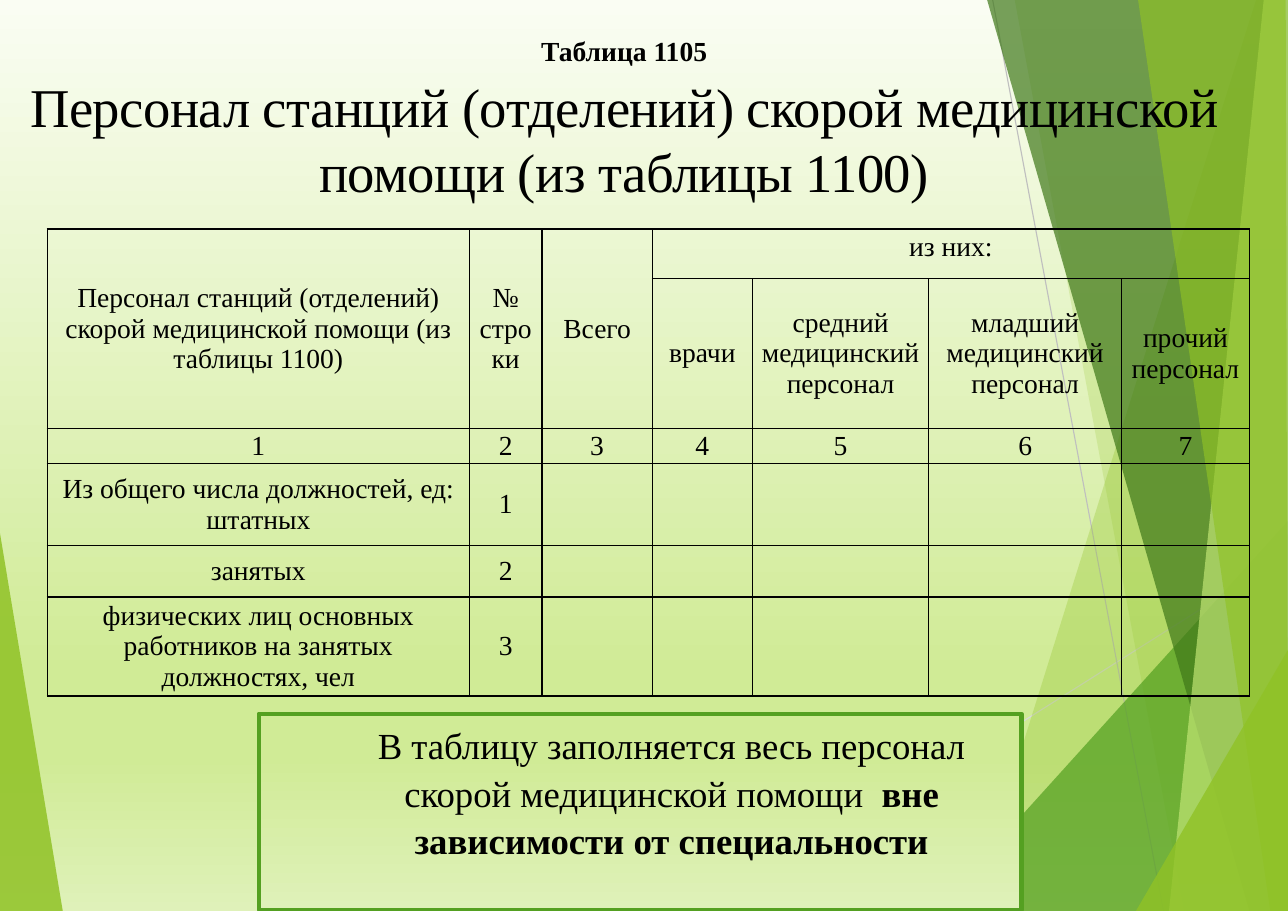
from lxml import etree
from pptx import Presentation
from pptx.dml.color import RGBColor
from pptx.enum.shapes import MSO_CONNECTOR, MSO_SHAPE
from pptx.enum.text import MSO_ANCHOR, PP_ALIGN
from pptx.oxml.ns import qn
from pptx.util import Inches, Pt

STRAIGHT = MSO_CONNECTOR.STRAIGHT
RECTANGLE = MSO_SHAPE.RECTANGLE
TOP, MIDDLE = MSO_ANCHOR.TOP, MSO_ANCHOR.MIDDLE
CENTER = PP_ALIGN.CENTER

COLORS = {
    "black": "000000", "lime": "90C226", "green": "54A021", "forest": "3F7819",
    "pale": "C0E474", "silver": "D9D9D9", "gray": "BFBFBF",
    "mist": "FAFDF3", "meadow": "D0EB96", "fresh": "DFF1B9",
}
WIDTH, HEIGHT = 11.69, 8.27
PAGE_STOPS = [(0, "mist"), (74, "meadow"), (83, "meadow"), (100, "fresh")]
NOTE_STOPS = [(0, "meadow"), (21, "meadow"), (100, "fresh")]

LEFT_WEDGE = ([(0, 4.84), (0.57, 8.27), (0, 8.27)], "lime", 85)
RAYS = [((6.56, 8.27), (11.69, 5.03), "silver"), ((9.01, 0), (10.56, 8.27), "gray")]
RIGHT_WEDGES = [
    ([(11.4, 0), (8.81, 8.27), (11.69, 8.27), (11.69, 0)], "lime", 30),
    ([(9.21, 0), (10.75, 8.27), (11.69, 8.27), (11.69, 0)], "lime", 20),
    ([(8.49, 8.27), (11.69, 4.73), (11.69, 8.27)], "green", 72),
    ([(8.96, 0), (11.34, 8.27), (11.69, 8.27), (11.69, 0)], "forest", 70),
    ([(11.47, 0), (10.61, 8.27), (11.69, 8.27), (11.69, 0)], "pale", 70),
    ([(10.33, 0), (11.53, 8.27), (11.69, 8.27), (11.67, 0)], "lime", 65),
    ([(10.31, 8.27), (11.69, 5.9), (11.69, 8.27)], "lime", 80),
]

STAFF = "Персонал станций (отделений) скорой медицинской помощи (из таблицы 1100)"
COLUMNS = [3.83, 0.66, 1, 0.91, 1.6, 1.75, 1.16]
ROWS = [0.45, 1.36, 0.32, 0.74, 0.47, 0.74]
MERGES = [(0, 0, 1, 0), (0, 1, 1, 1), (0, 2, 1, 2), (0, 3, 0, 6)]
CELLS = [
    [[STAFF], ["№", "строки"], ["Всего"], ["из них:"]],
    [[], [], [], ["врачи"], ["средний медицинский", "персонал"],
     ["младший", "медицинский", "персонал"], ["прочий персонал"]],
    [[str(number)] for number in range(1, 8)],
    [["Из общего числа должностей, ед:", "штатных"], ["1"]],
    [["занятых"], ["2"]],
    [["физических лиц основных работников на занятых", "должностях, чел"], ["3"]],
]


class Slide:
    font = "Times New Roman"

    def __init__(self, deck):
        self.page = deck.slides.add_slide(deck.slide_layouts[6])

    def color(self, name):
        return RGBColor.from_string(COLORS[name])

    def gradient(self, fill, element, stops):
        fill.gradient()
        fill.gradient_angle = 270
        stop_list = element.find(".//" + qn("a:gsLst"))
        for stop in list(stop_list):
            stop_list.remove(stop)
        for place, name in stops:
            stop = etree.SubElement(stop_list, qn("a:gs"), pos=str(place * 1000))
            etree.SubElement(stop, qn("a:srgbClr"), val=COLORS[name])

    def background(self, stops):
        self.gradient(self.page.background.fill, self.page.element, stops)

    def wedge(self, points, name, opacity):
        corners = [(round(x * 100), round(y * 100)) for x, y in points]
        builder = self.page.shapes.build_freeform(*corners[0], scale=Inches(0.01))
        builder.add_line_segments(corners[1:], close=True)
        shape = builder.convert_to_shape()
        shape.shadow.inherit = False
        shape.line.fill.background()
        shape.fill.solid()
        shape.fill.fore_color.rgb = self.color(name)
        tint = shape.element.spPr.find(".//" + qn("a:srgbClr"))
        etree.SubElement(tint, qn("a:alpha"), val=str(opacity * 1000))

    def line(self, start, end, name):
        ends = [Inches(value) for value in (*start, *end)]
        line = self.page.shapes.add_connector(STRAIGHT, *ends)
        line.line.color.rgb = self.color(name)
        line.line.width = Pt(0.75)
        etree.SubElement(line.element.spPr, qn("a:effectLst"))

    def para(self, frame, spans, first, spacing=None):
        para = frame.paragraphs[0] if first else frame.add_paragraph()
        para.alignment = CENTER
        if spacing:
            para.line_spacing = spacing
        for text, size, bold in spans:
            span = para.add_run()
            span.text = text
            span.font.name = self.font
            span.font.size = Pt(size)
            span.font.bold = bold
            span.font.color.rgb = self.color("black")
        return para

    def title(self, label, text):
        box = self.page.shapes.add_textbox(0, 0, Inches(WIDTH), Inches(2.05))
        frame = box.text_frame
        frame.word_wrap = True
        frame.vertical_anchor = TOP
        frame.margin_top = Inches(0.31)
        caption = self.para(frame, [(label, 18, True)], True)
        caption._p.get_or_add_pPr().set("marR", str(Inches(0.36)))
        heading = self.para(frame, [(text, 35.7, False)], False, Pt(42.7))
        heading.space_before = Pt(3.6)
        heading.runs[0].font._element.set("spc", "-30")

    def cell(self, cell, lines, spacing):
        cell.fill.background()
        cell.vertical_anchor = MIDDLE
        cell.margin_left = cell.margin_right = Inches(0.07)
        cell.margin_top = cell.margin_bottom = 0
        for index, text in enumerate(lines):
            self.para(cell.text_frame, [(text, 18, False)], index == 0, spacing)
        properties = cell._tc.get_or_add_tcPr()
        for index, side in enumerate(("lnL", "lnR", "lnT", "lnB")):
            border = etree.Element(qn("a:" + side), w=str(Pt(1)))
            fill = etree.SubElement(border, qn("a:solidFill"))
            etree.SubElement(fill, qn("a:srgbClr"), val=COLORS["black"])
            properties.insert(index, border)

    def table(self, left, top):
        table = self.page.shapes.add_table(
            len(ROWS), len(COLUMNS), Inches(left), Inches(top),
            Inches(sum(COLUMNS)), Inches(sum(ROWS))).table
        table.first_row = table.horz_banding = False
        for column, width in zip(table.columns, COLUMNS):
            column.width = Inches(width)
        for row, height in zip(table.rows, ROWS):
            row.height = Inches(height)
        for row, texts in enumerate(CELLS):
            for column in range(len(COLUMNS)):
                lines = texts[column] if column < len(texts) else []
                spacing = Pt(11) if (row, column) == (0, 3) else None
                self.cell(table.cell(row, column), lines, spacing)
        for top_row, first, bottom_row, last in MERGES:
            table.cell(top_row, first).merge(table.cell(bottom_row, last))

    def note(self, left, top, width, height, spans):
        box = self.page.shapes.add_shape(
            RECTANGLE, Inches(left), Inches(top), Inches(width), Inches(height))
        box.shadow.inherit = False
        self.gradient(box.fill, box.element, NOTE_STOPS)
        box.line.color.rgb = self.color("green")
        box.line.width = Pt(3)
        frame = box.text_frame
        frame.word_wrap = True
        frame.vertical_anchor = TOP
        para = self.para(frame, spans, True, 1.08)
        para._p.get_or_add_pPr().set("marL", str(Inches(0.57)))


def main():
    deck = Presentation()
    deck.slide_width, deck.slide_height = Inches(WIDTH), Inches(HEIGHT)
    slide = Slide(deck)
    slide.background(PAGE_STOPS)
    slide.wedge(*LEFT_WEDGE)
    for ray in RAYS:
        slide.line(*ray)
    for wedge in RIGHT_WEDGES:
        slide.wedge(*wedge)
    slide.title("Таблица 1105", STAFF)
    slide.table(0.43, 2.08)
    slide.note(2.35, 6.48, 6.92, 1.78, [
        ("В таблицу заполняется весь персонал скорой медицинской помощи  ", 24, False),
        ("вне зависимости от специальности", 24, True),
    ])
    deck.save("out.pptx")


if __name__ == "__main__":
    main()
